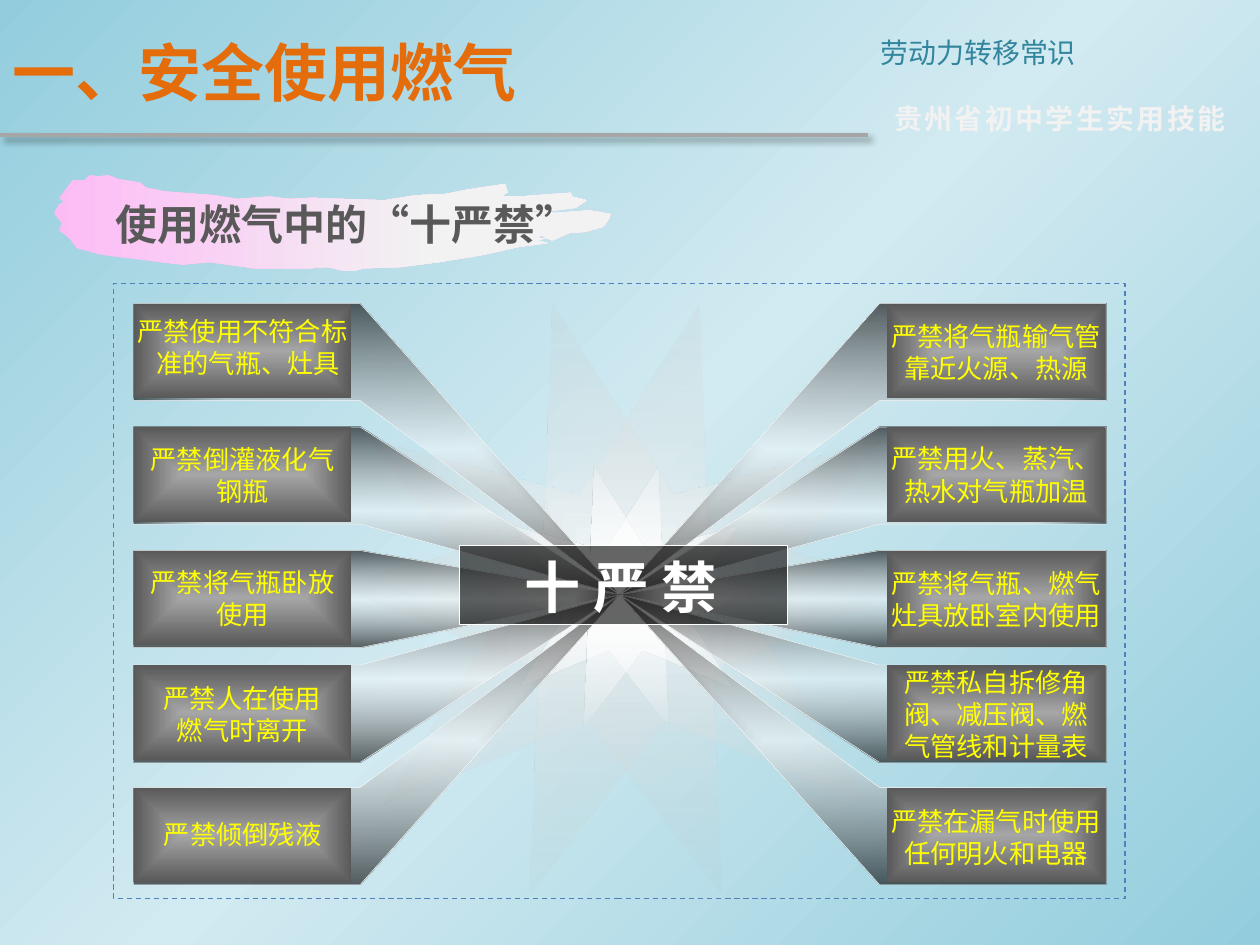
"""Build the gas safety slide with its ten strict bans around a centre plate."""
from lxml import etree
from pptx import Presentation
from pptx.dml.color import RGBColor
from pptx.enum.dml import MSO_LINE
from pptx.enum.shapes import MSO_CONNECTOR, MSO_SHAPE
from pptx.enum.text import MSO_ANCHOR, PP_ALIGN
from pptx.oxml import parse_xml
from pptx.oxml.ns import nsdecls, qn
from pptx.util import Inches, Pt

WHITE = RGBColor(0xFF, 0xFF, 0xFF)
BLACK = RGBColor(0, 0, 0)
YELLOW = RGBColor(0xFF, 0xFF, 0)
ORANGE = RGBColor(0xE4, 0x6C, 0x0A)
TEAL = RGBColor(0x31, 0x85, 0x9C)
BLUE = RGBColor(0x4F, 0x81, 0xBD)
SKY = RGBColor(0x93, 0xCD, 0xDD)
PALE = RGBColor(0xD2, 0xEA, 0xF1)
PINK = RGBColor(0xFD, 0xBB, 0xF5)
MIST = RGBColor(0xF2, 0xF2, 0xF2)
SILVER = RGBColor(0xB6, 0xB6, 0xB6)
GREY = RGBColor(0xA6, 0xA6, 0xA6)
DARK = RGBColor(0x59, 0x59, 0x59)
CJK = "Noto Sans CJK SC"

BASE = {"size": Pt(15), "bold": False, "name": CJK}
AXIS = 4.92
HUB = 4.72
ROWS = [2.41, 3.39, 4.37, 5.28, 6.25]
LEFT = [
    ("严禁使用不符合标准的气瓶、灶具", 1.73, 2.5, 0.5),
    ("严禁倒灌液化气\n钢瓶", 1.47, 3.51, 0.51),
    ("严禁将气瓶卧放\n使用", 1.47, 4.49, 0.51),
    ("严禁人在使用\n燃气时离开", 1.26, 5.41, 0.51),
    ("严禁倾倒残液", 1.25, 6.49, 0.25),
]
RIGHT = [
    ("严禁将气瓶输气管\n靠近火源、热源", 1.74, 2.54, 0.51),
    ("严禁用火、蒸汽、\n热水对气瓶加温", 1.68, 3.51, 0.5),
    ("严禁将气瓶、燃气\n灶具放卧室内使用", 1.75, 4.5, 0.5),
    ("严禁私自拆修角\n阀、减压阀、燃\n气管线和计量表", 1.62, 5.28, 0.76),
    ("严禁在漏气时使用\n任何明火和电器", 1.73, 6.39, 0.51),
]
BRUSH = [
    (0.71, 1.39), (0.67, 1.43), (0.58, 1.43), (0.53, 1.49), (0.47, 1.57), (0.49, 1.59),
    (0.51, 1.6), (0.47, 1.62), (0.43, 1.69), (0.45, 1.72), (0.49, 1.77), (0.47, 1.83),
    (0.55, 1.89), (0.61, 1.97), (0.8, 2.02), (0.95, 2.04), (1.12, 2.06), (1.27, 2.08),
    (1.45, 2.1), (1.66, 2.08), (2.02, 2.13), (2.46, 2.13), (2.6, 2.12), (2.73, 2.15),
    (2.81, 2.15), (2.89, 2.13), (3.18, 2.12), (3.49, 2.08), (3.8, 2.03), (3.9, 2.01),
    (4.12, 1.96), (4.35, 1.93), (4.27, 1.91), (4.29, 1.9), (4.36, 1.89), (4.29, 1.89),
    (4.27, 1.88), (4.3, 1.87), (4.38, 1.91), (4.52, 1.85), (4.65, 1.84), (4.79, 1.8),
    (4.84, 1.73), (4.85, 1.7), (4.68, 1.67), (4.41, 1.69), (4.16, 1.68), (4.19, 1.67),
    (4.33, 1.68), (4.57, 1.65), (4.66, 1.59), (4.54, 1.56), (4.53, 1.53), (4.12, 1.56),
    (3.99, 1.56), (4.01, 1.54), (4.03, 1.53), (4.01, 1.46), (3.68, 1.51), (3.54, 1.54),
    (3.3, 1.55), (3.05, 1.59), (2.74, 1.58), (2.48, 1.57), (2.3, 1.58), (2.14, 1.56),
    (1.88, 1.58), (1.76, 1.56), (1.7, 1.55), (1.31, 1.52), (1.16, 1.49), (1.11, 1.45),
    (0.93, 1.42), (0.86, 1.39), (0.78, 1.4),
]


def paint(props, stops, way):
    """Swap the solid fill for a gradient of (position, colour, alpha) stops."""
    marks = "".join(
        f'<a:gs pos="{pos * 1000}"><a:srgbClr val="{tint}">'
        f'<a:alpha val="{alpha * 1000}"/></a:srgbClr></a:gs>'
        for pos, tint, alpha in stops)
    if isinstance(way, str):
        tail = (f'<a:path path="{way}"><a:fillToRect l="50000" t="50000" '
                'r="50000" b="50000"/></a:path>')
    else:
        tail = f'<a:lin ang="{way * 60000}" scaled="0"/>'
    fill = parse_xml(f'<a:gradFill {nsdecls("a")} rotWithShape="1">'
                     f'<a:gsLst>{marks}</a:gsLst>{tail}</a:gradFill>')
    props.replace(props.find(qn("a:solidFill")), fill)


def shade(props, blur, dist, alpha):
    """Return an effect list with a soft black shadow, added to props."""
    fx = parse_xml(
        f'<a:effectLst {nsdecls("a")}><a:outerShdw blurRad="{Pt(blur)}" '
        f'dist="{Pt(dist)}" dir="2700000" algn="tl"><a:srgbClr val="000000">'
        f'<a:alpha val="{alpha * 1000}"/></a:srgbClr></a:outerShdw></a:effectLst>')
    props.append(fx)
    return fx


def dress(shape, stops=None, way=0, line=None, width=0.25):
    """Give a shape its gradient and outline, and drop its shadow."""
    shape.shadow.inherit = False
    if stops:
        shape.fill.solid()
        paint(shape._element.spPr, stops, way)
    else:
        shape.fill.background()
    if line is None:
        shape.line.fill.background()
    else:
        shape.line.color.rgb = line
        shape.line.width = Pt(width)
    return shape


def block(slide, kind, box, **look):
    """Add a preset shape."""
    return dress(slide.shapes.add_shape(kind, *map(Inches, box)), **look)


def outline(slide, points, **look):
    """Add a closed polygon through the points."""
    spots = [(Inches(x), Inches(y)) for x, y in points]
    pen = slide.shapes.build_freeform(*spots[0])
    pen.add_line_segments(spots[1:], close=True)
    return dress(pen.convert_to_shape(), **look)


def write(frame, text, tint, look, align=PP_ALIGN.LEFT, hang=False, glow=False, space=0):
    """Fill a text frame, one paragraph for each line."""
    for num, part in enumerate(text.split("\n")):
        para = frame.add_paragraph() if num else frame.paragraphs[0]
        para.alignment = align
        run = para.add_run()
        run.text = part
        style = {**BASE, **look}
        for key, value in style.items():
            setattr(run.font, key, value)
        para.line_spacing = Pt(round(style["size"].pt * 1.22, 1))
        run.font.color.rgb = tint
        props = run._r.get_or_add_rPr()
        if space:
            props.set("spc", str(space))
        if style["name"] == CJK:
            east = etree.SubElement(props, qn("a:ea"))
            east.set("typeface", CJK)
        if glow:
            props.find(qn("a:solidFill")).addnext(shade(props, 1, 2, 100))
        if hang:
            mark = para._p.get_or_add_pPr()
            mark.set("marL", str(Inches(0.09)))
            mark.set("indent", str(-Inches(0.09)))


def label(slide, box, text, tint, look, wrap=True, bare=False, anchor=MSO_ANCHOR.TOP, **more):
    """Add a text box, with no insets when bare."""
    frame = slide.shapes.add_textbox(*map(Inches, box)).text_frame
    frame.word_wrap = wrap
    frame.vertical_anchor = anchor
    if bare:
        for side in ("left", "top", "right", "bottom"):
            setattr(frame, f"margin_{side}", 0)
    write(frame, text, tint, look, **more)


def head(slide):
    """Draw the title, its rule and the course names."""
    rule = slide.shapes.add_connector(
        MSO_CONNECTOR.STRAIGHT, 0, Inches(1.07), Inches(6.89), Inches(1.07))
    rule.line.color.rgb = GREY
    rule.line.width = Pt(2.25)
    shade(rule._element.spPr, 4, 3, 40)
    label(slide, (6.89, 0.23, 3.11, 0.37), "劳动力转移常识", TEAL, {"size": Pt(16)})
    label(slide, (7, 0.75, 2.9, 0.37), "贵州省初中学生实用技能", MIST,
          {"size": Pt(16), "bold": True}, wrap=False, space=140)
    label(slide, (0, 0.05, 6.89, 1.02), "一、安全使用燃气", ORANGE,
          {"size": Pt(36), "bold": True}, anchor=MSO_ANCHOR.MIDDLE)


def banner(slide):
    """Draw the brush stroke and its heading."""
    outline(slide, BRUSH, stops=[(0, PINK, 100), (68, MIST, 100)])
    plate = block(slide, MSO_SHAPE.ROUNDED_RECTANGLE, (0.79, 1.47, 3.49, 0.6))
    plate.text_frame.word_wrap = False
    write(plate.text_frame, "使用燃气中的“十严禁”", DARK,
          {"size": Pt(24), "bold": True, "name": "Calibri"})


def stars(slide, box, stops):
    """Draw two stars turned either way."""
    for turn in (15, 345):
        star = block(slide, MSO_SHAPE.STAR_5_POINT, box, stops=stops, way="shape")
        star.rotation = turn


def ban(slide, top, item, right):
    """Draw one ray to the hub with its panel and text."""
    text, width, high, tall = item
    ray = [(AXIS, HUB), (2.86, top), (1.06, top), (1.06, top + 0.77), (2.86, top + 0.77)]
    if right:
        ray = [(2 * AXIS - x, y) for x, y in ray]
    outline(slide, ray, stops=[(0, WHITE, 40), (100, BLACK, 60)], way="rect", line=WHITE)
    left = 7.04 if right else 1.06
    block(slide, MSO_SHAPE.RECTANGLE, (left, top, 1.73, 0.75),
          stops=[(0, GREY, 100), (100, DARK, 100)], way="shape")
    label(slide, (left + (1.73 - width) / 2, high, width, tall), text, YELLOW, {},
          wrap="\n" not in text, bare=True, align=PP_ALIGN.CENTER, hang=True, glow=True)


def hub(slide):
    """Draw the dark plate in the middle."""
    block(slide, MSO_SHAPE.RECTANGLE, (3.65, 4.33, 2.6, 0.63),
          stops=[(0, BLACK, 60), (100, BLACK, 60)], line=WHITE, width=0.75)
    label(slide, (4.03, 4.38, 1.8, 0.54), "十 严 禁", WHITE, {"size": Pt(32), "bold": True},
          wrap=False, bare=True, align=PP_ALIGN.CENTER, hang=True, glow=True)


def main():
    """Build and save the slide."""
    deck = Presentation()
    deck.slide_width, deck.slide_height = Inches(10), Inches(7.5)
    slide = deck.slides.add_slide(deck.slide_layouts[6])
    slide.background.fill.solid()
    paint(slide._element.find(".//" + qn("p:bgPr")),
          [(0, SKY, 100), (50, PALE, 100), (100, SKY, 100)], 45)
    head(slide)
    banner(slide)
    frame = block(slide, MSO_SHAPE.RECTANGLE, (0.9, 2.25, 8.03, 4.88), line=BLUE, width=0.75)
    frame.line.dash_style = MSO_LINE.DASH
    stars(slide, (2.72, 2.33, 4.49, 4.49), [(0, WHITE, 50), (100, SILVER, 0)])
    stars(slide, (3.98, 3.67, 1.97, 1.97), [(0, WHITE, 100), (100, WHITE, 0)])
    for right, items in enumerate((LEFT, RIGHT)):
        for top, item in zip(ROWS, items):
            ban(slide, top, item, right)
    hub(slide)
    deck.save("out.pptx")


if __name__ == "__main__":
    main()
